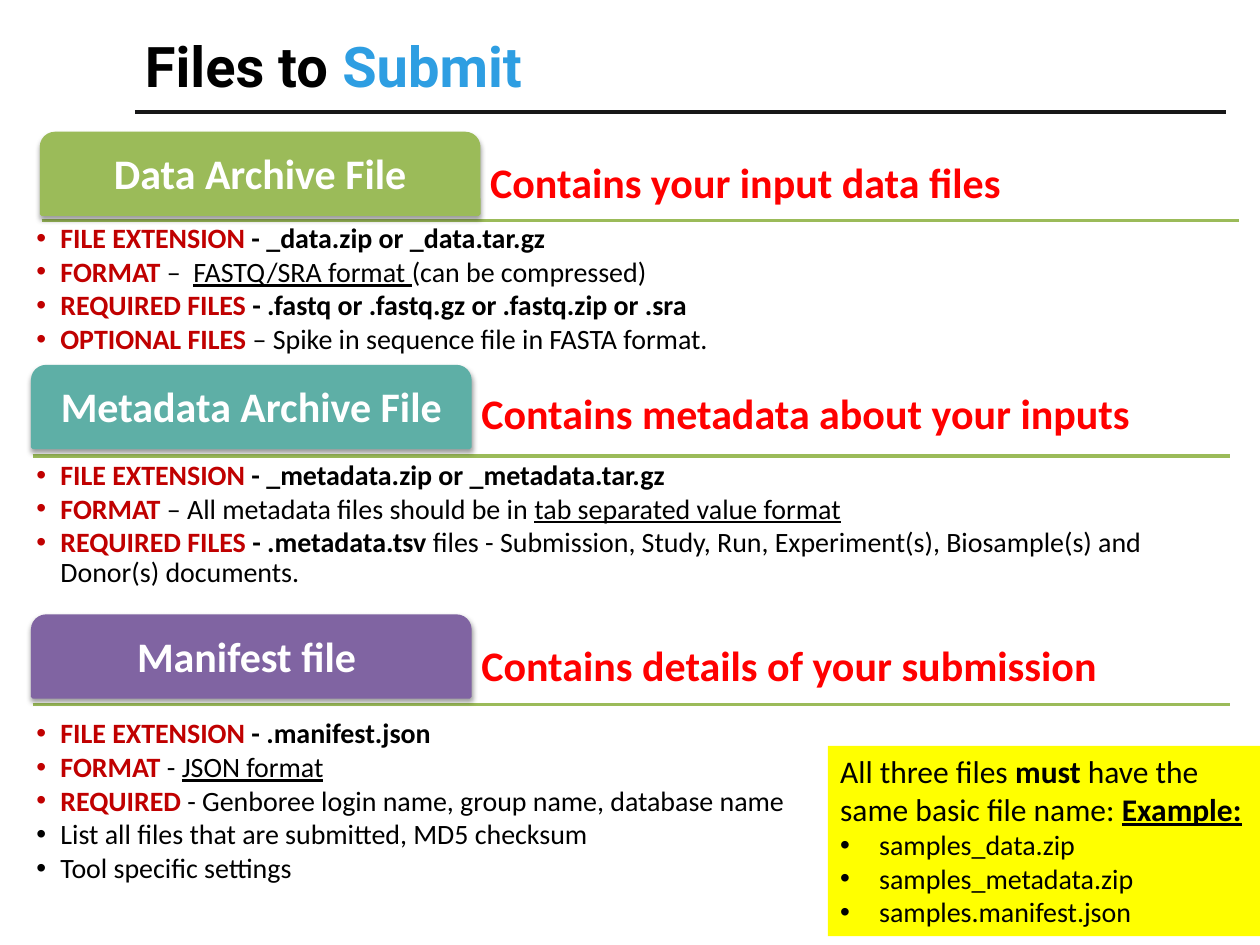
from dataclasses import dataclass

from lxml.etree import SubElement
from pptx import Presentation
from pptx.dml.color import RGBColor
from pptx.enum.shapes import MSO_CONNECTOR, MSO_SHAPE
from pptx.enum.text import MSO_ANCHOR as ANCHOR, MSO_AUTO_SIZE as AUTO, PP_ALIGN as ALIGN
from pptx.oxml import parse_xml
from pptx.oxml.ns import nsdecls, qn
from pptx.util import Inches, Pt


@dataclass(frozen=True)
class Theme:
    body_font: str = "Calibri"
    title_font: str = "Roboto"
    title_size: int = 32
    head_size: int = 24
    note_size: int = 18
    body_size: int = 16
    text: str = "000000"
    light: str = "FFFFFF"
    accent: str = "2E9EE2"
    caption: str = "FF0000"
    key: str = "C00000"
    title_rule: str = "171718"
    green: str = "9BBB59"
    teal: str = "5EAFA6"
    purple: str = "8064A2"
    note: str = "FFFF00"


THEME = Theme()
KEY, BOLD, UNDER, PLAIN = "key", "bold", "under", "plain"
TAB_W, TAB_H, BODY_LEFT, BODY_W = 3.47, 0.64, 0.26, 9.5

# tab text, colour, left, tab top, caption, caption top, caption width, rule y,
# bullets top, bullets height, bullets
SECTIONS = [
    ("Data Archive File", THEME.green, 0.33, 1.06,
     "Contains your input data files", 1.06, 5.72, 1.75, 1.75, 1.11, [
         [("FILE EXTENSION", KEY), (" - _data.zip or _data.tar.gz", BOLD)],
         [("FORMAT ", KEY), ("–  ", PLAIN), ("FASTQ/SRA format ", UNDER),
          ("(can be compressed)", PLAIN)],
         [("REQUIRED FILES", KEY),
          (" - .fastq or .fastq.gz or .fastq.zip or .sra", BOLD)],
         [("OPTIONAL FILES ", KEY),
          ("– Spike in sequence file in FASTA format.", PLAIN)],
     ]),
    ("Metadata Archive File", THEME.teal, 0.26, 2.91,
     "Contains metadata about your inputs", 2.89, 5.93, 3.62, 3.63, 1.19, [
         [("FILE EXTENSION", KEY), (" - _metadata.zip or _metadata.tar.gz", BOLD)],
         [("FORMAT ", KEY), ("– All metadata files should be in ", PLAIN),
          ("tab separated value format", UNDER)],
         [("REQUIRED FILES", KEY), (" - .metadata.tsv ", BOLD),
          ("files - Submission, Study, Run, Experiment(s), Biosample(s) "
           "and Donor(s) documents.", PLAIN)],
     ]),
    ("Manifest file ", THEME.purple, 0.26, 4.89,
     "Contains details of your submission", 4.89, 5.93, 5.59, 5.68, 1.39, [
         [("FILE EXTENSION", KEY), (" - .manifest.json", BOLD)],
         [("FORMAT ", KEY), ("- ", PLAIN), ("JSON format", UNDER)],
         [("REQUIRED ", KEY),
          ("- Genboree login name, group name, database name", PLAIN)],
         [("List all files that are submitted, MD5 checksum", PLAIN)],
         [("Tool specific settings", PLAIN)],
     ]),
]
NOTE = [("All three files ", PLAIN), ("must", BOLD),
        (" have the same basic file name: ", PLAIN), ("Example:", BOLD + UNDER)]
EXAMPLES = ["samples_data.zip", "samples_metadata.zip", "samples.manifest.json"]


class SlideBuilder:
    def __init__(self, slide, theme):
        self.s = slide
        self.t = theme

    def font(self, r, size, color, bold=False, name=None):
        f = r.font
        f.name, f.size, f.bold = name or self.t.body_font, Pt(size), bold
        f.color.rgb = RGBColor.from_string(color)

    def frame(self, sp, insets, anchor=ANCHOR.TOP):
        tf = sp.text_frame
        tf.word_wrap, tf.auto_size, tf.vertical_anchor = True, AUTO.NONE, anchor
        tf.margin_left, tf.margin_top, tf.margin_right, tf.margin_bottom = map(Inches, insets)
        return tf

    def runs(self, p, parts, size):
        for text, style in parts:
            r = p.add_run()
            r.text = text
            self.font(r, size, self.t.key if style == KEY else self.t.text,
                      style == KEY or BOLD in style)
            r.font.underline = UNDER in style

    def bullet(self, p, indent):
        pPr = p._p.get_or_add_pPr()
        pPr.set("marL", str(Inches(indent)))
        pPr.set("indent", str(-Inches(indent)))
        SubElement(pPr, qn("a:buFont")).set("typeface", "Arial")
        SubElement(pPr, qn("a:buChar")).set("char", "•")

    def rule(self, x1, x2, y, color):
        ln = self.s.shapes.add_connector(
            MSO_CONNECTOR.STRAIGHT, Inches(x1), Inches(y), Inches(x2), Inches(y))
        ln.line.color.rgb = RGBColor.from_string(color)
        ln.line.width = Pt(2)
        SubElement(ln._element.spPr, qn("a:effectLst"))

    def title(self, parts, x, y, w, h):
        sp = self.s.shapes.title
        sp.left, sp.top, sp.width, sp.height = map(Inches, (x, y, w, h))
        p = self.frame(sp, (0.1, 0.04, 0.1, 0.05), ANCHOR.MIDDLE).paragraphs[0]
        p.alignment = ALIGN.LEFT
        for text, color in parts:
            r = p.add_run()
            r.text = text
            self.font(r, self.t.title_size, color, True, self.t.title_font)

    def heading(self, sp, text, color, anchor, align):
        p = self.frame(sp, (0.05,) * 4, anchor).paragraphs[0]
        p.text, p.alignment, p.line_spacing = text, align, 0.9
        self.font(p.runs[0], self.t.head_size, color, True)

    def tab(self, text, color, x, y):
        sp = self.s.shapes.add_shape(MSO_SHAPE.ROUND_2_SAME_RECTANGLE, Inches(x),
                                     Inches(y), Inches(TAB_W), Inches(TAB_H))
        sp.fill.solid()
        sp.fill.fore_color.rgb = sp.line.color.rgb = RGBColor.from_string(color)
        sp.line.width = Pt(2)
        sp._element.spPr.append(parse_xml(
            f'<a:effectLst {nsdecls("a")}><a:outerShdw blurRad="{Pt(3.1)}" '
            f'dist="{Pt(1.6)}" dir="5400000" rotWithShape="0"><a:srgbClr val="000000">'
            '<a:alpha val="38000"/></a:srgbClr></a:outerShdw></a:effectLst>'))
        self.heading(sp, text, self.t.light, ANCHOR.MIDDLE, ALIGN.CENTER)

    def caption(self, text, x, y, w):
        sp = self.s.shapes.add_textbox(Inches(x), Inches(y), Inches(w), Inches(TAB_H))
        self.heading(sp, text, self.t.caption, ANCHOR.BOTTOM, ALIGN.LEFT)

    def bullets(self, items, y, h):
        sp = self.s.shapes.add_textbox(Inches(BODY_LEFT), Inches(y),
                                       Inches(BODY_W), Inches(h))
        tf = self.frame(sp, (0.03,) * 4)
        for i, parts in enumerate(items):
            p = tf.add_paragraph() if i else tf.paragraphs[0]
            p.line_spacing, p.space_after = 0.9, Pt(2)
            self.bullet(p, 0.19)
            self.runs(p, parts, self.t.body_size)

    def note(self, intro, examples, x, y, w, h):
        sp = self.s.shapes.add_shape(MSO_SHAPE.RECTANGLE, *map(Inches, (x, y, w, h)))
        sp.shadow.inherit = False
        sp.fill.solid()
        sp.fill.fore_color.rgb = RGBColor.from_string(self.t.note)
        sp.line.fill.background()
        tf = self.frame(sp, (0.1, 0.05, 0.1, 0.05))
        self.runs(tf.paragraphs[0], intro, self.t.note_size)
        for text in examples:
            p = tf.add_paragraph()
            self.bullet(p, 0.31)
            self.runs(p, [(text, PLAIN)], self.t.body_size)
        for p in tf.paragraphs:
            p.alignment = ALIGN.LEFT


def main():
    prs = Presentation()
    prs.slide_width, prs.slide_height = Inches(10), Inches(7.5)
    b = SlideBuilder(prs.slides.add_slide(prs.slide_layouts[5]), THEME)
    b.rule(1.07, 9.73, 0.89, THEME.title_rule)
    b.title([("Files to ", THEME.text), ("Submit", THEME.accent)], 1.05, 0.18, 7.56, 0.69)
    for (name, color, left, top, caption, cap_top, cap_w,
         rule_y, body_top, body_h, items) in SECTIONS:
        b.rule(left, left + BODY_W, rule_y, THEME.green)
        b.caption(caption, left + TAB_W + 0.04, cap_top, cap_w)
        b.tab(name, color, left, top)
        b.bullets(items, body_top, body_h)
    b.note(NOTE, EXAMPLES, 6.57, 5.92, 3.43, 1.51)
    prs.save("out.pptx")


if __name__ == "__main__":
    main()
